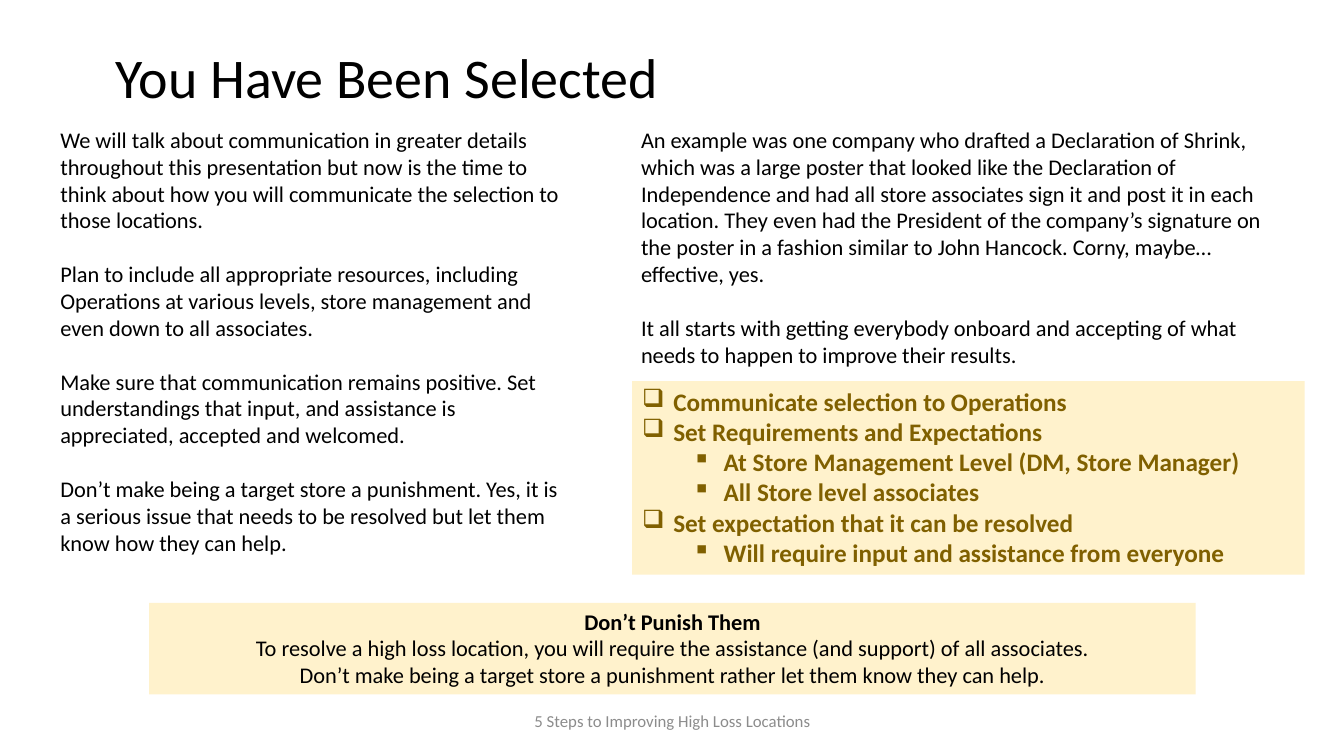
import pptx
import pptx.util
import pptx.dml.color
import pptx.enum.shapes
import pptx.enum.text
import pptx.oxml.ns
import lxml.etree

RGB = pptx.dml.color.RGBColor
BLACK = RGB(0x00, 0x00, 0x00)
GREY = RGB(0x8C, 0x8C, 0x8C)
CREAM = RGB(0xFF, 0xF2, 0xCC)
BROWN = RGB(0x80, 0x60, 0x00)

ALIGN = pptx.enum.text.PP_ALIGN
ANCHOR = pptx.enum.text.MSO_ANCHOR
FIT = pptx.enum.text.MSO_AUTO_SIZE
SCALE = 9144  # EMU in one px, 100 px to the inch

LEFT = [
    "We will talk about communication in greater details throughout this presentation but now is "
    "the time to think about how you will communicate the selection to those locations.",
    "Plan to include all appropriate resources, including Operations at various levels, store "
    "management and even down to all associates.",
    "Make sure that communication remains positive. Set understandings that input, and assistance "
    "is appreciated, accepted and welcomed.",
    "Don’t make being a target store a punishment. Yes, it is a serious issue that needs to be "
    "resolved but let them know how they can help.",
]
RIGHT = [
    "An example was one company who drafted a Declaration of Shrink, which was a large poster that "
    "looked like the Declaration of Independence and had all store associates sign it and post it "
    "in each location. They even had the President of the company’s signature on the poster in a "
    "fashion similar to John Hancock. Corny, maybe…effective, yes.",
    "It all starts with getting everybody onboard and accepting of what needs to happen to improve "
    "their results.",
]
TASKS = [
    (0, "Communicate selection to Operations"),
    (0, "Set Requirements and Expectations"),
    (1, "At Store Management Level (DM, Store Manager)"),
    (1, "All Store level associates"),
    (0, "Set expectation that it can be resolved"),
    (1, "Will require input and assistance from everyone"),
]
ADVICE = [
    "Don’t Punish Them",
    "To resolve a high loss location, you will require the assistance (and support) of all associates.",
    "Don’t make being a target store a punishment rather let them know they can help.",
]


def px(num):
    return pptx.util.Emu(num * SCALE)


class Deck:
    font = "Calibri"
    marks = "❑▪"

    def __init__(self, width, height):
        self.file = pptx.Presentation()
        self.file.slide_width, self.file.slide_height = px(width), px(height)
        self.slide = self.file.slides.add_slide(self.file.slide_layouts[6])

    def fill(self, shape, lines, size, color=BLACK, bold=False, align=ALIGN.LEFT, gap=0):
        """Fill the shape with one paragraph per line, gap points apart."""
        frame = shape.text_frame
        frame.word_wrap = True
        frame.text = "\n".join(lines)
        for para in frame.paragraphs:
            para.alignment = align
            para.space_after = pptx.util.Pt(gap)
            for run in para.runs:
                run.font.name = self.font
                run.font.size = pptx.util.Pt(size)
                run.font.bold = bold
                run.font.color.rgb = color
        frame.paragraphs[-1].space_after = pptx.util.Pt(0)
        return frame

    def text(self, box, lines, size, **style):
        shape = self.slide.shapes.add_textbox(*map(px, box))
        return self.fill(shape, lines, size, **style)

    def panel(self, box, lines, size, **style):
        kind = pptx.enum.shapes.MSO_SHAPE.RECTANGLE
        shape = self.slide.shapes.add_shape(kind, *map(px, box))
        shape.shadow.inherit = False
        shape.fill.solid()
        shape.fill.fore_color.rgb = CREAM
        shape.line.fill.background()
        frame = self.fill(shape, lines, size, **style)
        frame.vertical_anchor = ANCHOR.TOP
        frame.auto_size = FIT.SHAPE_TO_FIT_TEXT
        return frame

    def bullet(self, para, level, color):
        para.level = level
        props = para._p.get_or_add_pPr()
        props.set("marL", str(px(31 + 50 * level)))
        props.set("indent", str(px(-31)))
        name = pptx.oxml.ns.qn
        tint = lxml.etree.SubElement(props, name("a:buClr"))
        lxml.etree.SubElement(tint, name("a:srgbClr"), val=str(color))
        lxml.etree.SubElement(props, name("a:buChar"), char=self.marks[level])

    def save(self):
        self.file.save("out.pptx")


def main():
    deck = Deck(1333, 750)

    title = deck.text((92, 40, 614, 80), ["You Have Been Selected"], 40)
    title.vertical_anchor = ANCHOR.MIDDLE
    title.margin_left = px(23)
    title.paragraphs[0].line_spacing = 0.9

    foot = deck.text((442, 695, 450, 40), ["5 Steps to Improving High Loss Locations"], 12,
                     color=GREY, align=ALIGN.CENTER)
    foot.vertical_anchor = ANCHOR.MIDDLE

    for box, lines in (((50, 120, 520, 471), LEFT), ((626, 120, 667, 252), RIGHT)):
        deck.text(box, lines, 16, gap=19.2).auto_size = FIT.SHAPE_TO_FIT_TEXT

    tasks = deck.panel((627, 378, 667, 192), [line for _, line in TASKS], 18,
                       color=BROWN, bold=True)
    for para, (level, _) in zip(tasks.paragraphs, TASKS):
        deck.bullet(para, level, BROWN)

    advice = deck.panel((148, 598, 1038, 91), ADVICE, 16, align=ALIGN.CENTER)
    advice.paragraphs[0].runs[0].font.bold = True

    deck.save()


if __name__ == "__main__":
    main()
